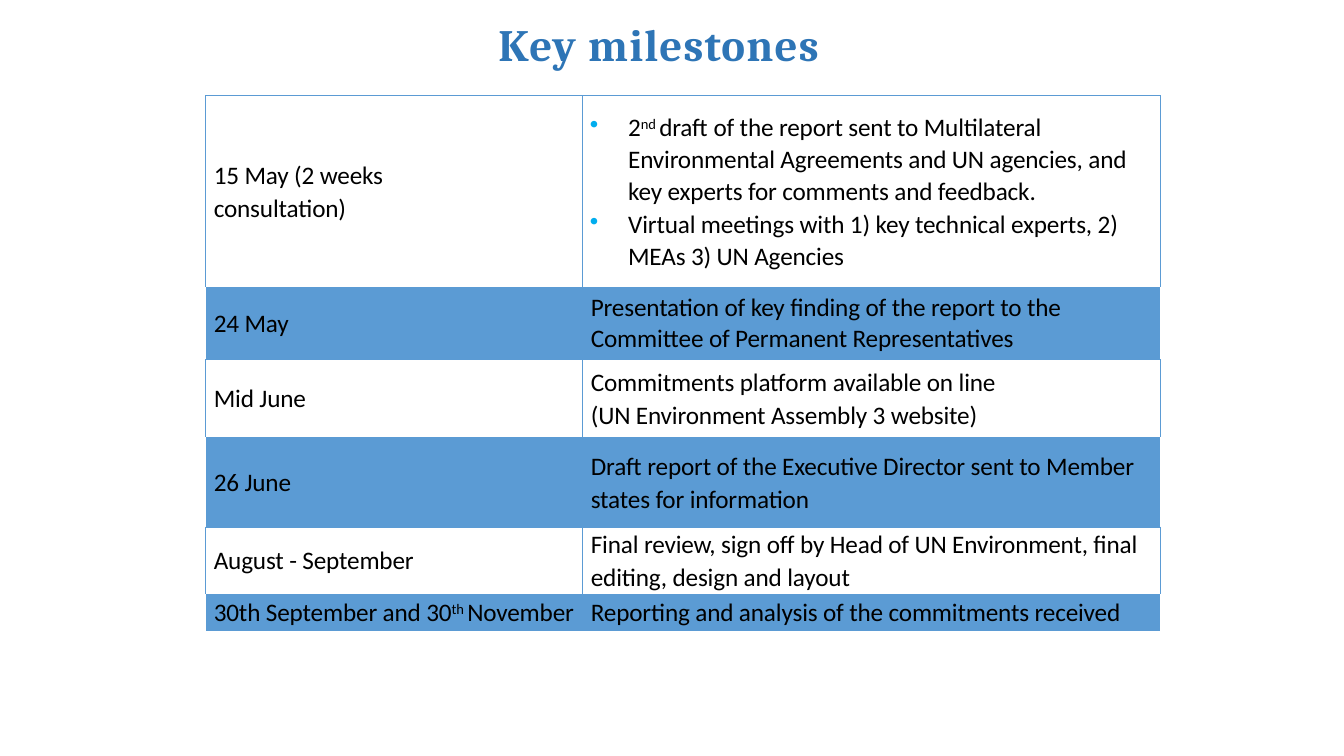
from lxml import etree
from pptx import Presentation
from pptx.dml.color import RGBColor
from pptx.enum.text import MSO_ANCHOR, PP_ALIGN
from pptx.oxml.ns import qn
from pptx.util import Inches, Pt

MIDDLE = MSO_ANCHOR.MIDDLE
CENTER = PP_ALIGN.CENTER

TITLE_BLUE = RGBColor(0x2E, 0x75, 0xB6)
TABLE_BLUE = RGBColor(0x5B, 0x9B, 0xD4)
BULLET_BLUE = RGBColor(0x00, 0xAD, 0xEE)
BLACK = RGBColor(0x00, 0x00, 0x00)

COLUMN_WIDTHS = (3.74, 5.73)
TIGHT = -0.1  # letter spacing in points
CELL_INDENT = 0.08
BULLET_INDENT = 0.45
BULLET_HANG = 0.38

# Row height, line spacing in points, date paragraphs, activity paragraphs.
# A paragraph is a list of runs; a run is (text, superscript percent).
MILESTONES = [
    (1.9, 22.9,
     [[("15 May (2 weeks", 0)], [("consultation)", 0)]],
     [[("2", 0), ("nd ", 26),
       ("draft of the report sent to Multilateral Environmental Agreements "
        "and UN agencies, and key experts for comments and feedback.", 0)],
      [("Virtual meetings with 1) key technical experts, 2) MEAs "
        "3) UN Agencies", 0)]]),
    (0.72, None,
     [[("24 May", 0)]],
     [[("Presentation of key finding of the report to the Committee of "
        "Permanent Representatives", 0)]]),
    (0.77, 22.9,
     [[("Mid June", 0)]],
     [[("Commitments platform available on line", 0)],
      [("(UN Environment Assembly 3 website)", 0)]]),
    (0.89, 23.4,
     [[("26 June", 0)]],
     [[("Draft report of the Executive Director sent to Member states for "
        "information", 0)]]),
    (0.66, 23.4,
     [[("August - September", 0)]],
     [[("Final review, sign off by Head of UN Environment, final editing, "
        "design and layout", 0)]]),
    (0.37, 23.4,
     [[("30th September and 30", 0), ("th ", 30), ("November", 0)]],
     [[("Reporting and analysis of the commitments received", 0)]]),
]


def add_run(paragraph, text, font, size, color, spacing, superscript=0):
    run = paragraph.add_run()
    run.text = text
    run.font.name = font
    run.font.size = Pt(size)
    run.font.color.rgb = color
    properties = run._r.get_or_add_rPr()
    properties.set("spc", str(round(spacing * 100)))
    if superscript:
        properties.set("baseline", str(superscript * 1000))
    return run


def indent(paragraph, left, first=0):
    properties = paragraph._p.get_or_add_pPr()
    properties.set("marL", str(Inches(left)))
    properties.set("indent", str(Inches(first)))
    return properties


def add_bullet(paragraph):
    properties = indent(paragraph, BULLET_INDENT, -BULLET_HANG)
    color = etree.SubElement(properties, qn("a:buClr"))
    etree.SubElement(color, qn("a:srgbClr")).set("val", str(BULLET_BLUE))
    etree.SubElement(properties, qn("a:buChar")).set("char", "•")


def set_borders(cell, visible_sides):
    """Draw the named sides (L, R, T, B) in blue and hide the others."""
    properties = cell._tc.get_or_add_tcPr()
    for side in "LRTB":
        line = etree.SubElement(properties, qn(f"a:ln{side}"))
        line.set("w", str(Pt(1)))
        if side in visible_sides:
            fill = etree.SubElement(line, qn("a:solidFill"))
            etree.SubElement(fill, qn("a:srgbClr")).set("val", str(TABLE_BLUE))
        else:
            etree.SubElement(line, qn("a:noFill"))


def fill_cell(cell, paragraphs, line_spacing, shaded, bulleted):
    cell.margin_left = cell.margin_right = 0
    cell.margin_top = cell.margin_bottom = 0
    cell.vertical_anchor = MIDDLE
    set_borders(cell, "" if shaded else "LRTB")
    if shaded:
        cell.fill.solid()
        cell.fill.fore_color.rgb = TABLE_BLUE
    else:
        cell.fill.background()

    frame = cell.text_frame
    for number, runs in enumerate(paragraphs):
        paragraph = frame.add_paragraph() if number else frame.paragraphs[0]
        if line_spacing:
            paragraph.line_spacing = Pt(line_spacing)
        if number:
            paragraph.space_before = Pt(1)
        if bulleted:
            add_bullet(paragraph)
        else:
            indent(paragraph, CELL_INDENT)
        for text, superscript in runs:
            add_run(paragraph, text, "Calibri", 18, BLACK, TIGHT, superscript)


def add_title(slide, left, top, width, height):
    title = slide.shapes.add_textbox(
        Inches(left), Inches(top), Inches(width), Inches(height))
    frame = title.text_frame
    frame.word_wrap = True
    frame.vertical_anchor = MIDDLE
    frame.margin_left = frame.margin_top = frame.margin_bottom = 0
    frame.margin_right = Inches(0.52)
    paragraph = frame.paragraphs[0]
    paragraph.alignment = CENTER
    paragraph.line_spacing = 0.9
    indent(paragraph, 0.25)
    run = add_run(paragraph, "Key milestones", "Cambria", 32, TITLE_BLUE, 0.85)
    run.font.bold = True


def add_milestone_table(slide, left, top):
    height = sum(milestone[0] for milestone in MILESTONES)
    table = slide.shapes.add_table(
        len(MILESTONES), len(COLUMN_WIDTHS), Inches(left), Inches(top),
        Inches(sum(COLUMN_WIDTHS)), Inches(height)).table
    table.first_row = table.horz_banding = False
    for column, width in zip(table.columns, COLUMN_WIDTHS):
        column.width = Inches(width)
    for index, (row_height, spacing, date, activity) in enumerate(MILESTONES):
        table.rows[index].height = Inches(row_height)
        shaded = index % 2 == 1
        fill_cell(table.cell(index, 0), date, spacing, shaded, False)
        fill_cell(table.cell(index, 1), activity, spacing, shaded,
                  len(activity) > 1 and index == 0)


def main():
    presentation = Presentation()
    presentation.slide_width = Inches(13.33)
    presentation.slide_height = Inches(7.5)
    slide = presentation.slides.add_slide(presentation.slide_layouts[6])
    add_title(slide, 1.94, -0.04, 9.46, 1.01)
    add_milestone_table(slide, 2.04, 0.95)
    presentation.save("out.pptx")


if __name__ == "__main__":
    main()
